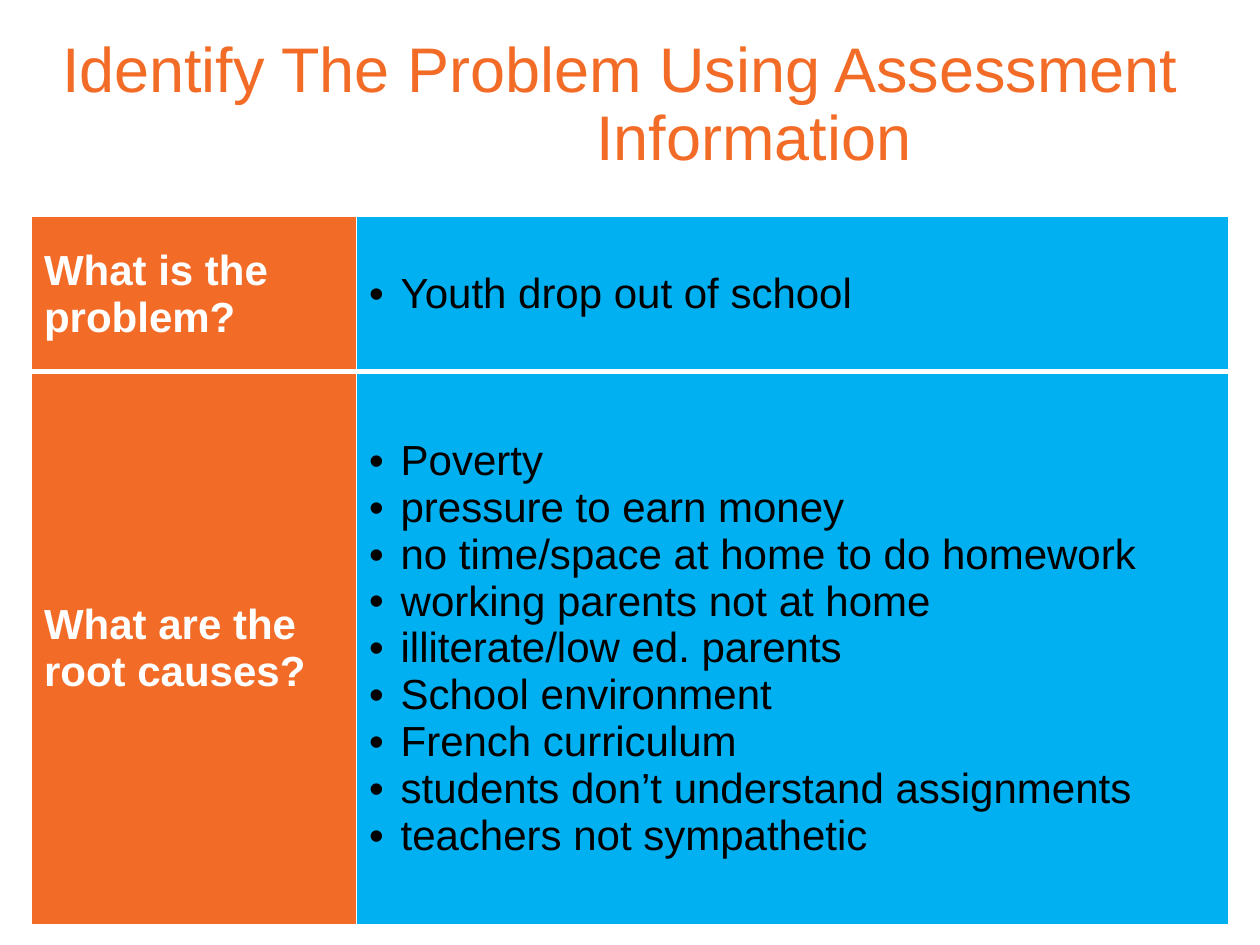
"""Build a slide with a table of a problem and its root causes."""
import pptx
import pptx.dml.color
import pptx.enum.text
import pptx.oxml
import pptx.oxml.ns
import pptx.util
from pptx.util import Inches

FONT = "Arial"
COLORS = {"orange": "F26C27", "blue": "00B0F0", "white": "FFFFFF", "black": "000000"}
ROWS = [
    ("What is the problem?", ["Youth drop out of school"]),
    ("What are the root causes?", [
        "Poverty",
        "pressure to earn money",
        "no time/space at home to do homework",
        "working parents not at home",
        "illiterate/low ed. parents",
        "School environment",
        "French curriculum",
        "students don’t understand assignments",
        "teachers not sympathetic",
    ]),
]
COLUMN_WIDTHS = (2.58, 6.92)
ROW_HEIGHTS = (1.23, 4.39)


def rgb(name):
    """Return the named colour."""
    return pptx.dml.color.RGBColor.from_string(COLORS[name])


def add_run(paragraph, text, size, color, bold=False):
    """Add a formatted run to a paragraph."""
    run = paragraph.add_run()
    run.text = text
    run.font.name = FONT
    run.font.size = pptx.util.Pt(size)
    run.font.bold = bold
    run.font.color.rgb = rgb(color)


def set_indent(paragraph, indent):
    """Give a paragraph a hanging indent in inches."""
    properties = paragraph._p.get_or_add_pPr()
    properties.set("marL", str(Inches(indent)))
    properties.set("indent", str(-Inches(indent)))
    return properties


def add_bullet(paragraph):
    """Give a paragraph a round bullet."""
    properties = set_indent(paragraph, 0.25)
    for tag, attribute, value in (("buFont", "typeface", FONT), ("buChar", "char", "•")):
        element = pptx.oxml.parse_xml(
            f'<a:{tag} {pptx.oxml.ns.nsdecls("a")} {attribute}="{value}"/>')
        properties.append(element)


def set_borders(cell, bottom):
    """Draw white borders with the given bottom width in points."""
    properties = cell._tc.get_or_add_tcPr()
    widths = {"lnL": 1, "lnR": 1, "lnT": 1, "lnB": bottom}
    for position, (tag, width) in enumerate(widths.items()):
        border = pptx.oxml.parse_xml(
            f'<a:{tag} {pptx.oxml.ns.nsdecls("a")} w="{pptx.util.Pt(width)}">'
            f'<a:solidFill><a:srgbClr val="{COLORS["white"]}"/></a:solidFill></a:{tag}>')
        properties.insert(position, border)


def fill_cell(cell, lines, fill, color, bottom, bold=False, bulleted=False):
    """Write the lines into a cell and format it."""
    cell.vertical_anchor = pptx.enum.text.MSO_ANCHOR.MIDDLE
    cell.fill.solid()
    cell.fill.fore_color.rgb = rgb(fill)
    set_borders(cell, bottom)
    frame = cell.text_frame
    for index, line in enumerate(lines):
        paragraph = frame.add_paragraph() if index else frame.paragraphs[0]
        if bulleted:
            add_bullet(paragraph)
        add_run(paragraph, line, 24, color, bold)


def add_title(slide, text):
    """Place and format the title."""
    title = slide.shapes.title
    title.left, title.top = Inches(0.17), Inches(0.13)
    title.width, title.height = Inches(9.5), Inches(1.42)
    frame = title.text_frame
    frame.auto_size = pptx.enum.text.MSO_AUTO_SIZE.NONE
    frame.vertical_anchor = pptx.enum.text.MSO_ANCHOR.MIDDLE
    paragraph = frame.paragraphs[0]
    paragraph.alignment = pptx.enum.text.PP_ALIGN.CENTER
    paragraph.line_spacing = 0.9
    set_indent(paragraph, 2.13)
    add_run(paragraph, text, 36, "orange")


def add_problem_table(slide):
    """Add the table of questions and answers."""
    shape = slide.shapes.add_table(
        len(ROWS), len(COLUMN_WIDTHS), Inches(0.25), Inches(1.72),
        Inches(sum(COLUMN_WIDTHS)), Inches(sum(ROW_HEIGHTS)))
    table = shape.table
    for column, width in zip(table.columns, COLUMN_WIDTHS):
        column.width = Inches(width)
    for index, (question, answers) in enumerate(ROWS):
        table.rows[index].height = Inches(ROW_HEIGHTS[index])
        bottom = 3 if index == 0 else 1
        fill_cell(table.cell(index, 0), [question], "orange", "white", bottom, bold=True)
        fill_cell(table.cell(index, 1), answers, "blue", "black", bottom, bulleted=True)


def main():
    """Build and save the presentation."""
    presentation = pptx.Presentation()
    presentation.slide_width, presentation.slide_height = Inches(10), Inches(7.5)
    slide = presentation.slides.add_slide(presentation.slide_layouts[5])
    add_title(slide, "Identify The Problem Using Assessment Information")
    add_problem_table(slide)
    presentation.save("out.pptx")


if __name__ == "__main__":
    main()
